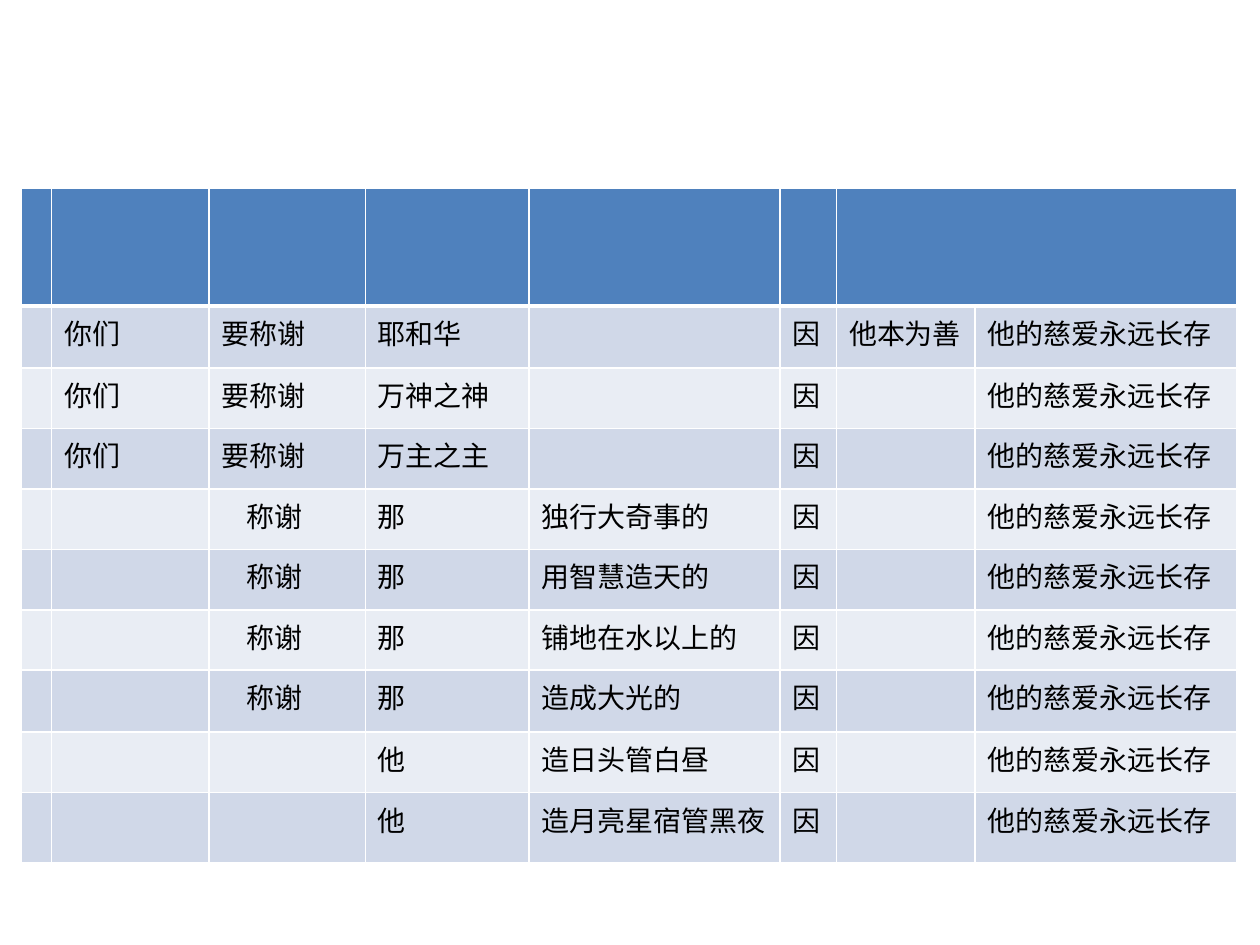
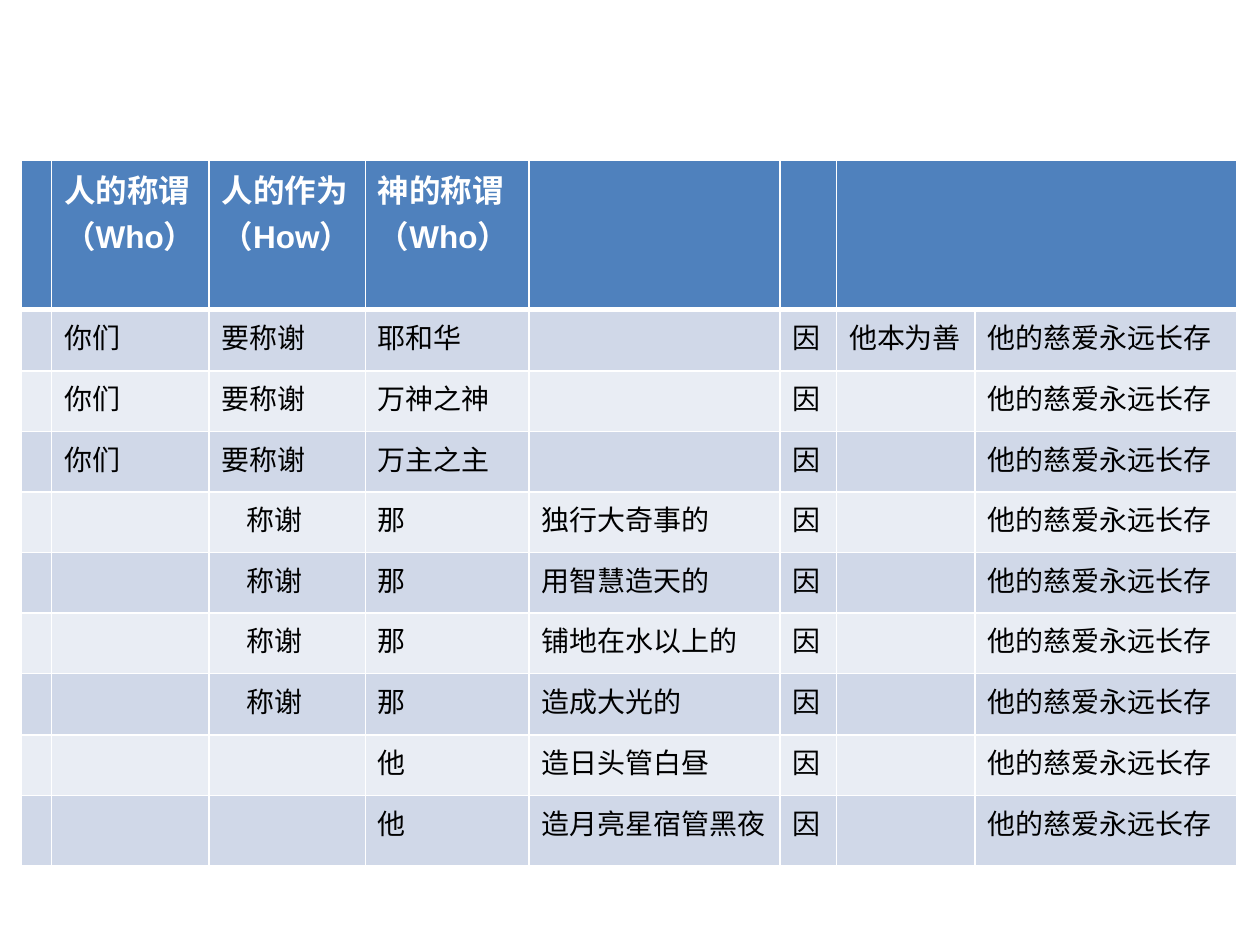
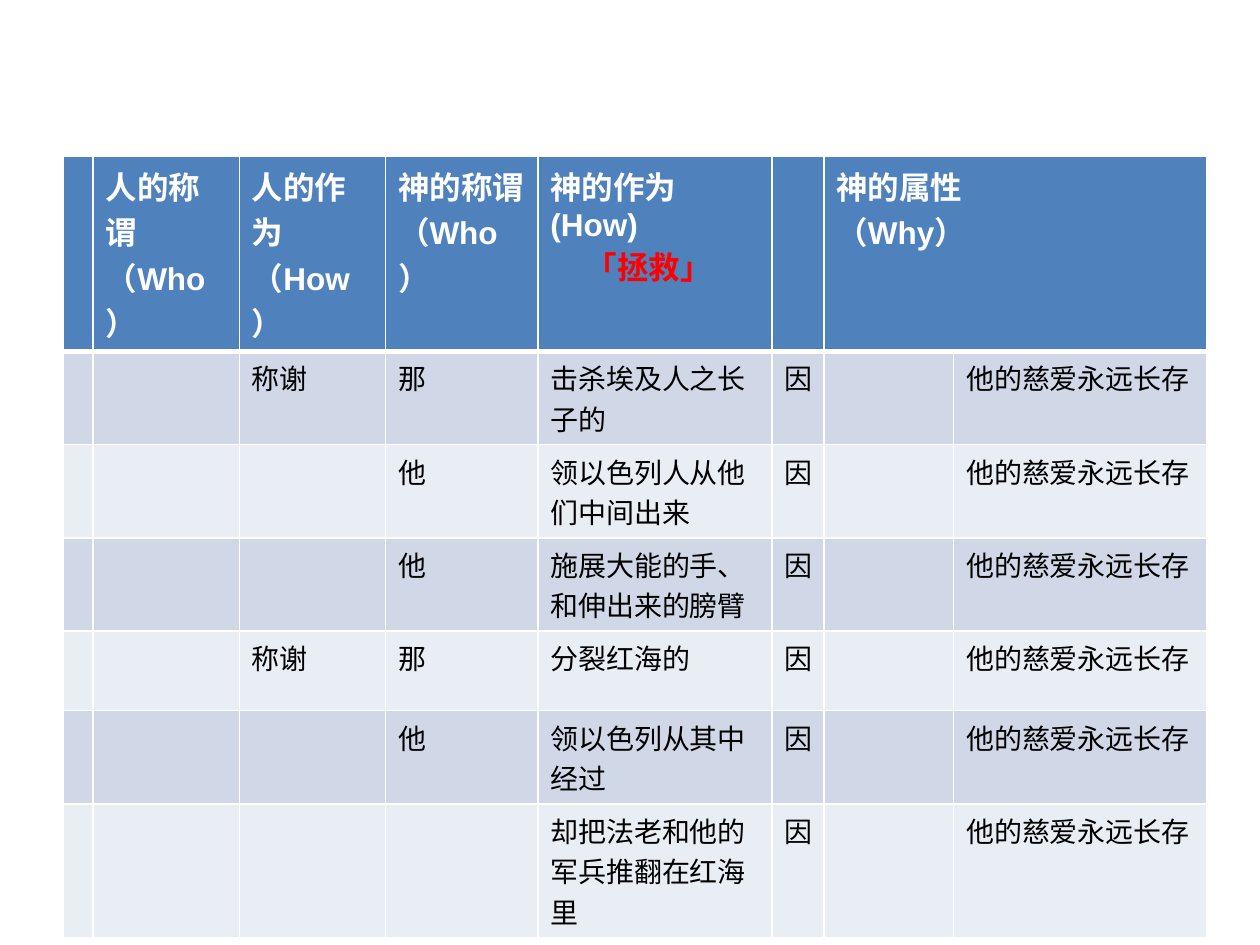
"""Build three table slides that lay out the lines of a psalm by who, how and why."""
from dataclasses import dataclass

from lxml.etree import SubElement
from pptx import Presentation
from pptx.dml.color import RGBColor as Color
from pptx.oxml.ns import qn
from pptx.util import Inches, Pt


@dataclass(frozen=True)
class Theme:
    white: str = "FFFFFF"
    black: str = "000000"
    accent: str = "FF0000"
    header: str = "4F81BD"
    bands: tuple = ("E9EDF4", "D0D8E8")
    font: str = "Arial"
    header_size: int = 18
    body_size: int = 16
    thin: int = 1
    thick: int = 3


THEME = Theme()
REASON, MERCY = "因", "他的慈爱永远长存"
WHO, HOW, GOD = "人的称谓（Who）", "人的作为（How）", "神的称谓（Who）"

creation_lines = [
    ("你们", "要称谢", "耶和华", "", "他本为善"),
    ("你们", "要称谢", "万神之神", "", ""),
    ("你们", "要称谢", "万主之主", "", ""),
    ("", "称谢", "那", "独行大奇事的", ""),
    ("", "称谢", "那", "用智慧造天的", ""),
    ("", "称谢", "那", "铺地在水以上的", ""),
    ("", "称谢", "那", "造成大光的", ""),
    ("", "", "他", "造日头管白昼", ""),
    ("", "", "他", "造月亮星宿管黑夜", ""),
]
rescue_lines = [
    ("", "称谢", "那", "击杀埃及人之长子的", ""),
    ("", "", "他", "领以色列人从他们中间出来", ""),
    ("", "", "他", "施展大能的手、和伸出来的膀臂", ""),
    ("", "称谢", "那", "分裂红海的", ""),
    ("", "", "他", "领以色列从其中经过", ""),
    ("", "", "", "却把法老和他的军兵推翻在红海里", ""),
]
creation_grid = {
    "left": 0.17,
    "columns": [0.24, 1.25, 1.24, 1.3, 1.99, 0.45, 1.1, 2.08],
    "rows": [0.94, 0.49] + [0.48] * 5 + [0.49, 0.48, 0.56],
    "lines": creation_lines,
    "indent": 0.2,
}
rescue_grid = {
    "left": 0.5,
    "columns": [0.23, 1.16, 1.16, 1.21, 1.86, 0.41, 1.03, 2.01],
    "rows": [1] + [0.63] * 5 + [0.9],
    "lines": rescue_lines,
    "indent": 0,
}
pages = [
    (1.49, creation_grid, ("", "", "", "", "")),
    (1.27, creation_grid, (WHO, HOW, GOD, "", "")),
    (1.24, rescue_grid, (WHO, HOW, GOD, "神的作为(How)\n「拯救」", "神的属性\n（Why）")),
]


def style_text(para, size, color, bold):
    """Format every run of a paragraph."""
    for span in para.runs:
        for key, value in {"size": Pt(size), "bold": bold, "name": THEME.font}.items():
            setattr(span.font, key, value)
        span.font.color.rgb = Color.from_string(color)


def add_borders(cell, top, bottom):
    """Draw white lines on the four sides of a cell."""
    properties = cell._tc.get_or_add_tcPr()
    widths = {"a:lnL": THEME.thin, "a:lnR": THEME.thin, "a:lnT": top, "a:lnB": bottom}
    for tag, width in widths.items():
        line = SubElement(properties, qn(tag), w=str(Pt(width)))
        SubElement(SubElement(line, qn("a:solidFill")), qn("a:srgbClr"), val=THEME.white)


deck = Presentation()
deck.slide_width, deck.slide_height = Inches(10), Inches(7.5)

for table_top, grid, (who, how, god, deed, nature) in pages:
    page = deck.slides.add_slide(deck.slide_layouts[6])
    columns, rows = grid["columns"], grid["rows"]
    table = page.shapes.add_table(
        len(rows), len(columns), Inches(grid["left"]), Inches(table_top),
        Inches(sum(columns)), Inches(sum(rows))).table
    table.first_row = table.horz_banding = False
    for column, width in zip(table.columns, columns):
        column.width = Inches(width)
    for row, height in zip(table.rows, rows):
        row.height = Inches(height)
    table.cell(0, 6).merge(table.cell(0, 7))

    content = [("", who, how, god, deed, "", nature, "")]
    for *opening, goodness in grid["lines"]:
        content.append(("", *opening, REASON, goodness, MERCY))

    for row_index, texts in enumerate(content):
        is_header = row_index == 0
        size = THEME.header_size if is_header else THEME.body_size
        fill = THEME.header if is_header else THEME.bands[row_index % 2]
        for column_index, text in enumerate(texts):
            cell = table.cell(row_index, column_index)
            add_borders(cell, THEME.thick if row_index == 1 else THEME.thin,
                        THEME.thick if is_header else THEME.thin)
            cell.fill.solid()
            cell.fill.fore_color.rgb = Color.from_string(fill)
            if not text:
                continue
            cell.text = text
            for para in cell.text_frame.paragraphs:
                color = THEME.white if is_header else THEME.black
                indent = grid["indent"] if para.text == "称谢" else 0
                if para.text.startswith("「"):
                    color, indent = THEME.accent, 0.28
                if indent:
                    para._p.get_or_add_pPr().set("marL", str(Inches(indent)))
                style_text(para, size, color, is_header)

deck.save("out.pptx")
